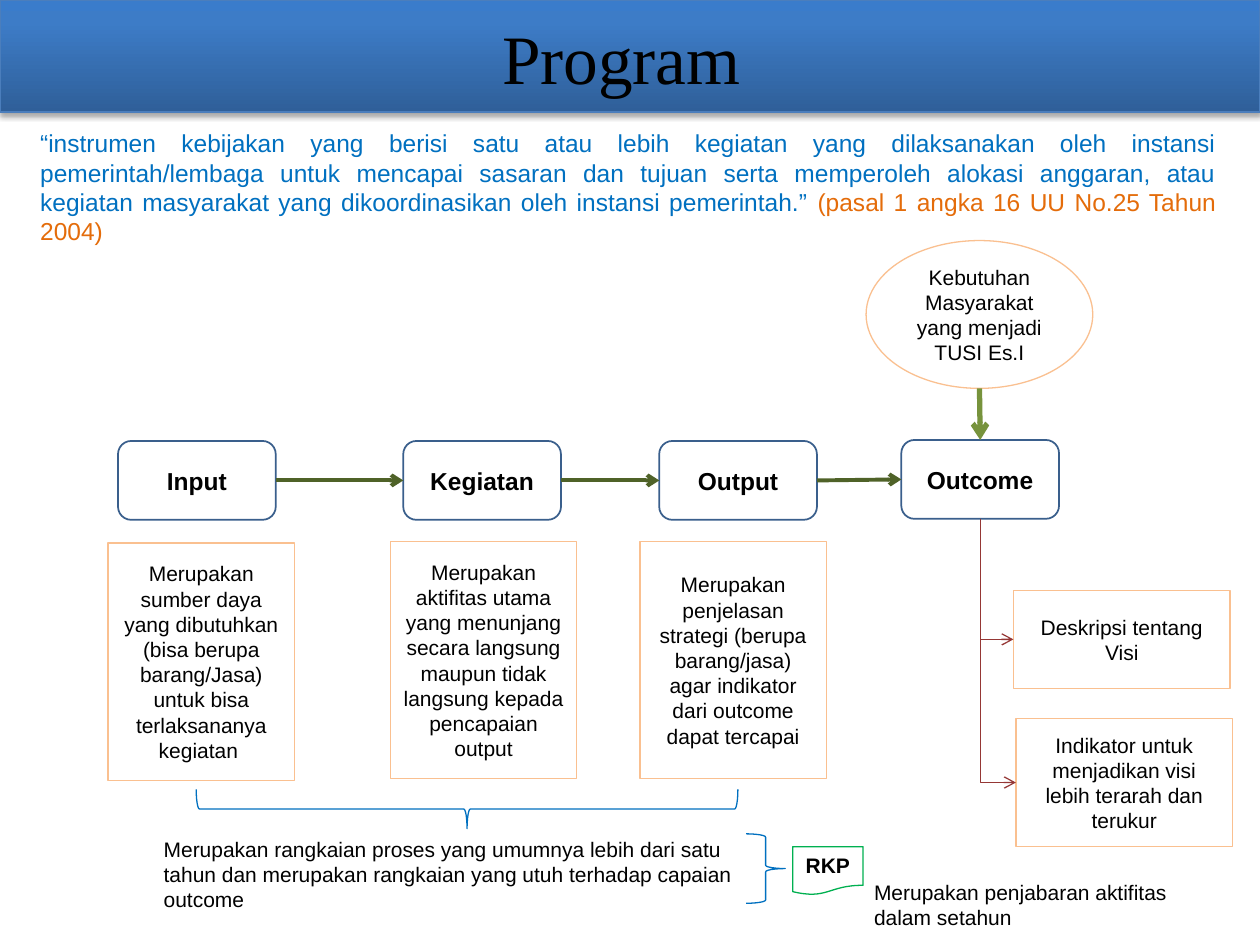
from copy import deepcopy
from dataclasses import dataclass

from pptx import Presentation
from pptx import util as u
from pptx.dml.color import RGBColor
from pptx.enum import shapes, text
from pptx.oxml import parse_xml
from pptx.oxml.ns import nsdecls, qn

COLORS = {
    "black": "000000", "blue": "0070C0", "orange": "E46C0A", "peach": "FAC090",
    "navy": "3A5F8C", "green": "77933C", "olive": "4F6228", "red": "953735",
    "rkp": "00B050", "band_line": "4B7EBC",
}
BAND_STOPS = [(0, "2F5F99"), (0.8, "3D7CC7"), (1, "3A7CCB")]
SHAPE = shapes.MSO_SHAPE
ALIGN = text.PP_ALIGN
STEP_W, STEP_H = 3.18, 1.59
DETAIL_W, DETAIL_H = 3.76, 4.78


@dataclass
class Box:
    kind: SHAPE
    x: float
    y: float
    w: float
    h: float
    line: str
    label: str = ""
    size: float = 12
    bold: bool = False
    width: float = 0.75


@dataclass
class Step:
    name: str
    x: float
    y: float
    detail: str = ""
    detail_x: float = 0
    detail_y: float = 0


STEPS = [
    Step("Input", 2.38, 8.89,
         "Merupakan sumber daya yang dibutuhkan (bisa berupa barang/Jasa) "
         "untuk bisa terlaksananya kegiatan ", 2.18, 10.95),
    Step("Kegiatan", 8.13, 8.89,
         "Merupakan aktifitas utama yang menunjang secara langsung maupun "
         "tidak langsung kepada pencapaian output", 7.87, 10.92),
    Step("Output", 13.29, 8.89,
         "Merupakan penjelasan strategi (berupa barang/jasa) agar indikator "
         "dari outcome dapat tercapai", 12.9, 10.92),
    Step("Outcome", 18.17, 8.87),
]
RESULTS = [
    Box(SHAPE.RECTANGLE, 20.43, 11.9, 4.37, 1.98, "peach", "Deskripsi tentang Visi"),
    Box(SHAPE.RECTANGLE, 20.48, 14.48, 4.37, 2.59, "peach",
        "Indikator untuk menjadikan visi lebih terarah dan terukur"),
]
NOTES = [
    (3.05, 16.74, 12.88, 1.8,
     "Merupakan rangkaian proses yang umumnya lebih dari satu tahun dan "
     "merupakan rangkaian yang utuh terhadap capaian outcome"),
    (17.37, 17.6, 7.14, 1.3, "Merupakan penjabaran aktifitas dalam setahun"),
]


def rgb(name: str) -> RGBColor:
    return RGBColor.from_string(COLORS[name])


def add_text(p, content: str, *, size=12, color="black", bold=False,
             font="Arial", align=ALIGN.LEFT) -> None:
    p.alignment = align
    r = p.add_run()
    r.text = content
    r.font.name = font
    r.font.size = u.Pt(size)
    r.font.bold = bold
    r.font.color.rgb = rgb(color)


def add_box(s, b: Box):
    sp = s.shapes.add_shape(b.kind, u.Cm(b.x), u.Cm(b.y), u.Cm(b.w), u.Cm(b.h))
    sp.shadow.inherit = False
    sp.fill.background()
    sp.line.color.rgb = rgb(b.line)
    sp.line.width = u.Pt(b.width)
    if b.label:
        tf = sp.text_frame
        tf.word_wrap = True
        tf.vertical_anchor = text.MSO_ANCHOR.MIDDLE
        add_text(tf.paragraphs[0], b.label, size=b.size, bold=b.bold, align=ALIGN.CENTER)
    return sp


def add_text_box(s, x: float, y: float, w: float, h: float):
    tf = s.shapes.add_textbox(u.Cm(x), u.Cm(y), u.Cm(w), u.Cm(h)).text_frame
    tf.word_wrap = True
    tf.auto_size = text.MSO_AUTO_SIZE.SHAPE_TO_FIT_TEXT
    return tf.paragraphs[0]


def add_arrow(s, kind, start, end, color: str, width: float, sides):
    c = s.shapes.add_connector(
        kind, start.left + start.width // 2, start.top + start.height,
        end.left + end.width // 2, end.top)
    if sides[0] is not None:
        c.begin_connect(start, sides[0])
    c.end_connect(end, sides[1])
    c.line.color.rgb = rgb(color)
    c.line.width = u.Pt(width)
    ln = c.line._get_or_add_ln()
    ln.append(parse_xml(f'<a:tailEnd {nsdecls("a")} type="arrow"/>'))
    ln.addnext(parse_xml(f'<a:effectLst {nsdecls("a")}/>'))
    return c


def turn_down_then_right(c) -> None:
    w, h = c.width, c.height
    c.left, c.top = c.left + (w - h) // 2, c.top + (h - w) // 2
    c.width, c.height = h, w
    c.rotation = 270 if hasattr(c, "rotation") else None
    sp_pr = c.element.spPr
    xfrm = sp_pr.find(qn("a:xfrm"))
    xfrm.set("rot", "16200000")
    xfrm.set("flipH", "1")
    sp_pr.find(qn("a:prstGeom")).set("prst", "bentConnector2")


def add_header(s) -> None:
    band = add_box(s, Box(SHAPE.RECTANGLE, 0, 0, 25.4, 2.26, "band_line"))
    band.fill.gradient()
    band.fill.gradient_angle = 90
    last = band.element.spPr.find(".//" + qn("a:gs"))
    last.addnext(deepcopy(last))
    for stop, (position, color) in zip(band.fill.gradient_stops, BAND_STOPS):
        stop.position = position
        stop.color.rgb = RGBColor.from_string(color)
    band.element.spPr.find(qn("a:effectLst")).append(parse_xml(
        f'<a:outerShdw {nsdecls("a")} blurRad="40000" dist="23000" dir="5400000" '
        'rotWithShape="0"><a:srgbClr val="000000"><a:alpha val="35000"/>'
        '</a:srgbClr></a:outerShdw>'))
    title = s.shapes.title
    title.element.addprevious(band.element)
    title.left, title.top, title.width, title.height = map(u.Cm, (1.27, 0.43, 22.86, 1.42))
    tf = title.text_frame
    tf.auto_size = text.MSO_AUTO_SIZE.NONE
    tf.vertical_anchor = text.MSO_ANCHOR.MIDDLE
    add_text(tf.paragraphs[0], "Program ", size=39.6, font="Times New Roman",
             align=ALIGN.CENTER)


def main() -> None:
    prs = Presentation()
    prs.slide_width, prs.slide_height = u.Cm(25.4), u.Cm(19.05)
    s = prs.slides.add_slide(prs.slide_layouts[5])
    add_header(s)

    p = add_text_box(s, 0.56, 2.46, 24.21, 2.06)
    add_text(p, "“instrumen kebijakan yang berisi satu atau lebih kegiatan yang "
             "dilaksanakan oleh instansi pemerintah/lembaga untuk mencapai sasaran "
             "dan tujuan serta memperoleh alokasi anggaran, atau kegiatan masyarakat "
             "yang dikoordinasikan oleh instansi pemerintah.” ",
             size=14, color="blue", align=ALIGN.JUSTIFY)
    add_text(p, "(pasal 1 angka 16 UU No.25 Tahun 2004)",
             size=14, color="orange", align=ALIGN.JUSTIFY)

    need = add_box(s, Box(SHAPE.OVAL, 17.46, 4.85, 4.57, 2.98, "peach",
                          "Kebutuhan Masyarakat yang menjadi TUSI Es.I"))
    steps = []
    for step in STEPS:
        steps.append(add_box(s, Box(SHAPE.ROUNDED_RECTANGLE, step.x, step.y, STEP_W, STEP_H,
                                    "navy", step.name, 14, True, 1)))
        if step.detail:
            add_box(s, Box(SHAPE.RECTANGLE, step.detail_x, step.detail_y,
                           DETAIL_W, DETAIL_H, "peach", step.detail))
    outcome = steps[-1]

    straight, elbow = shapes.MSO_CONNECTOR.STRAIGHT, shapes.MSO_CONNECTOR.ELBOW
    add_arrow(s, straight, need, outcome, "green", 3, (None, 0))
    for start, end in zip(steps, steps[1:]):
        add_arrow(s, straight, start, end, "olive", 2.25, (3, 1))
    for result in RESULTS:
        box = add_box(s, result)
        turn_down_then_right(add_arrow(s, elbow, outcome, box, "red", 0.75, (2, 1)))

    add_box(s, Box(SHAPE.RIGHT_BRACE, 9.02, 10.85, 0.79, 10.92, "blue")).rotation = 90
    add_box(s, Box(SHAPE.RIGHT_BRACE, 15.04, 16.81, 0.79, 1.4, "blue"))
    rkp = add_box(s, Box(SHAPE.FLOWCHART_DOCUMENT, 15.98, 17.07, 1.42, 0.97,
                         "rkp", "RKP", 12, True))
    rkp.text_frame.word_wrap = False
    rkp.text_frame.vertical_anchor = text.MSO_ANCHOR.TOP
    for *place, note in NOTES:
        add_text(add_text_box(s, *place), note)

    prs.save("out.pptx")


if __name__ == "__main__":
    main()
